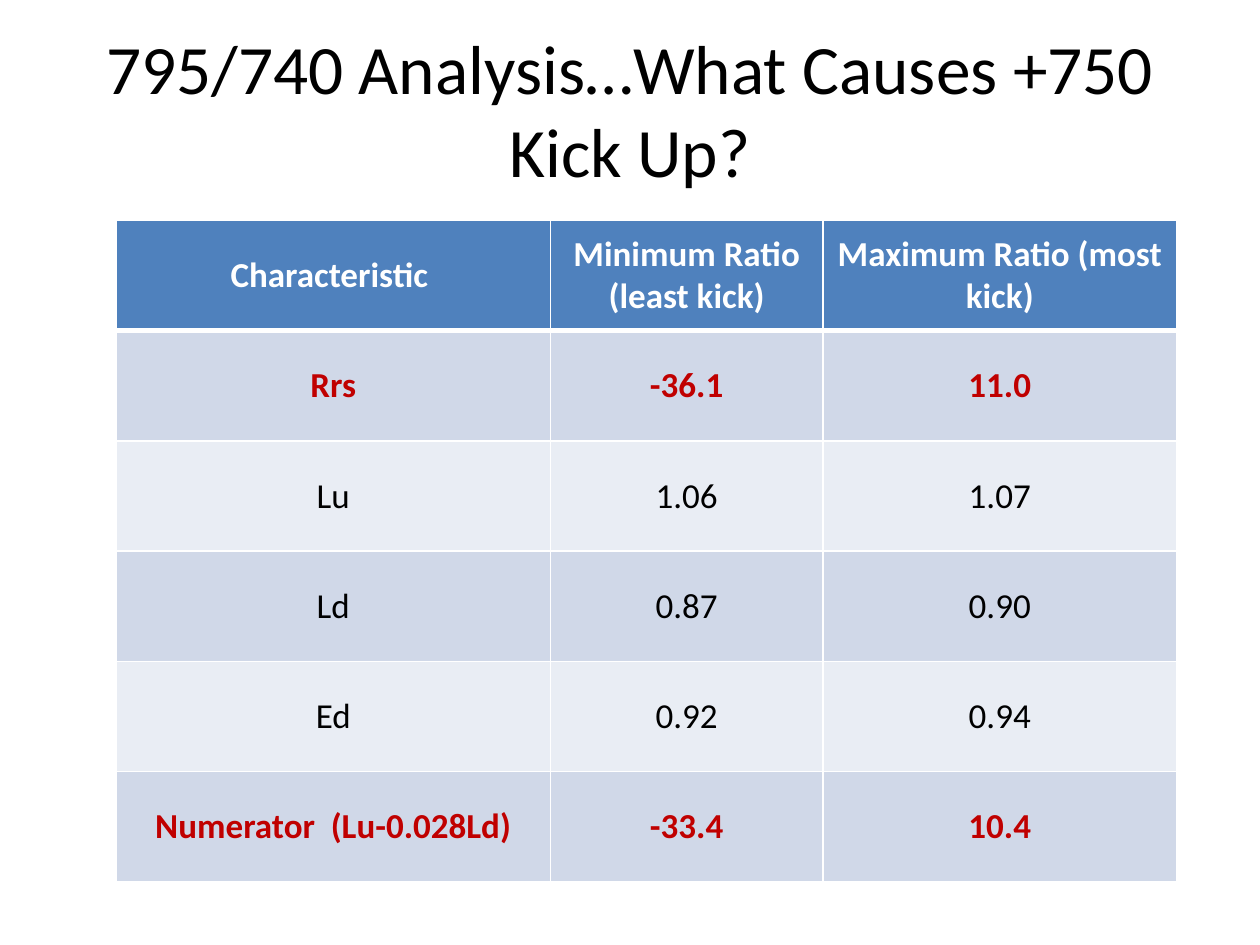
from lxml import etree
from pptx import Presentation, util as u
from pptx.dml.color import RGBColor
from pptx.enum import text as t
from pptx.oxml.ns import qn

deck = Presentation()
deck.slide_width, deck.slide_height = u.Inches(10), u.Inches(7.5)
wide, high = deck.slide_width, deck.slide_height
page = deck.slides.add_slide(deck.slide_layouts[5])


def paint(fmt, color):
    fmt.solid()
    fmt.fore_color.rgb = RGBColor.from_string(color)


def write(frame, words, size=20, color="000000", bold=False):
    frame.word_wrap = True
    frame.vertical_anchor = t.MSO_ANCHOR.MIDDLE
    par = frame.paragraphs[0]
    par.alignment = t.PP_ALIGN.CENTER
    run = par.add_run()
    run.text = words
    run.font.name, run.font.size, run.font.bold = "Calibri", u.Pt(size), bold
    paint(run.font.fill, color)


paint(page.background.fill, "FFFFFF")

# Title
title = page.shapes.title
title.left, title.top = int(wide * 0.05), int(high * 0.04)
title.width, title.height = int(wide * 0.9), int(high * 0.15)
write(title.text_frame, "795/740 Analysis…What Causes +750 Kick Up?", size=39.6)
title.text_frame.auto_size = t.MSO_AUTO_SIZE.NONE

# Ratio table
rows = [
    ["Characteristic ", "Minimum Ratio (least kick)", "Maximum Ratio (most kick)"],
    ["Rrs", "-36.1", "11.0"],
    ["Lu", "1.06", "1.07"],
    ["Ld", "0.87", "0.90"],
    ["Ed", "0.92", "0.94"],
    ["Numerator  (Lu-0.028Ld)", "-33.4", "10.4"],
]
cols = [3.45, 2.16, 2.81]
key = (1, 5)  # rows set in bold red
grid = page.shapes.add_table(len(rows), len(cols), u.Inches(0.92), u.Inches(1.75),
                             u.Inches(sum(cols)), int(high * 0.7)).table
for col, width in zip(grid.columns, cols):
    col.width = u.Inches(width)

for r, row in enumerate(rows):
    for c, words in enumerate(row):
        cell = grid.cell(r, c)

        # White rules, heavier under the header
        props = cell._tc.get_or_add_tcPr()
        for side in "LRTB":
            heavy = (r, side) in ((0, "B"), (1, "T"))
            line = etree.SubElement(props, qn("a:ln" + side),
                                    w=str(u.Pt(3 if heavy else 1)))
            solid = etree.SubElement(line, qn("a:solidFill"))
            etree.SubElement(solid, qn("a:srgbClr"), val="FFFFFF")

        # Header, then alternating bands
        paint(cell.fill, "4F81BD" if r == 0 else "D0D8E8" if r % 2 else "E9EDF4")
        ink = "FFFFFF" if r == 0 else "C00000" if r in key else "000000"
        write(cell.text_frame, words, color=ink, bold=r == 0 or r in key)
        cell.vertical_anchor = t.MSO_ANCHOR.MIDDLE

deck.save("out.pptx")
